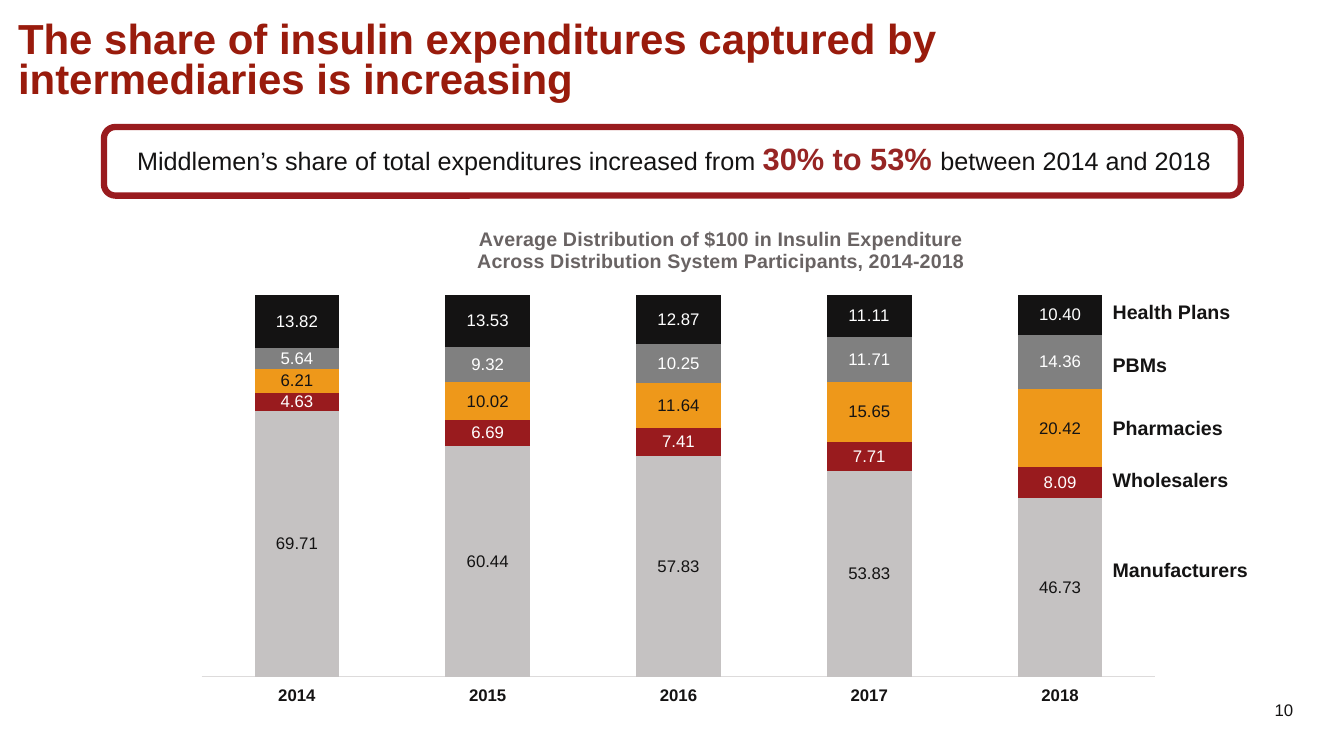
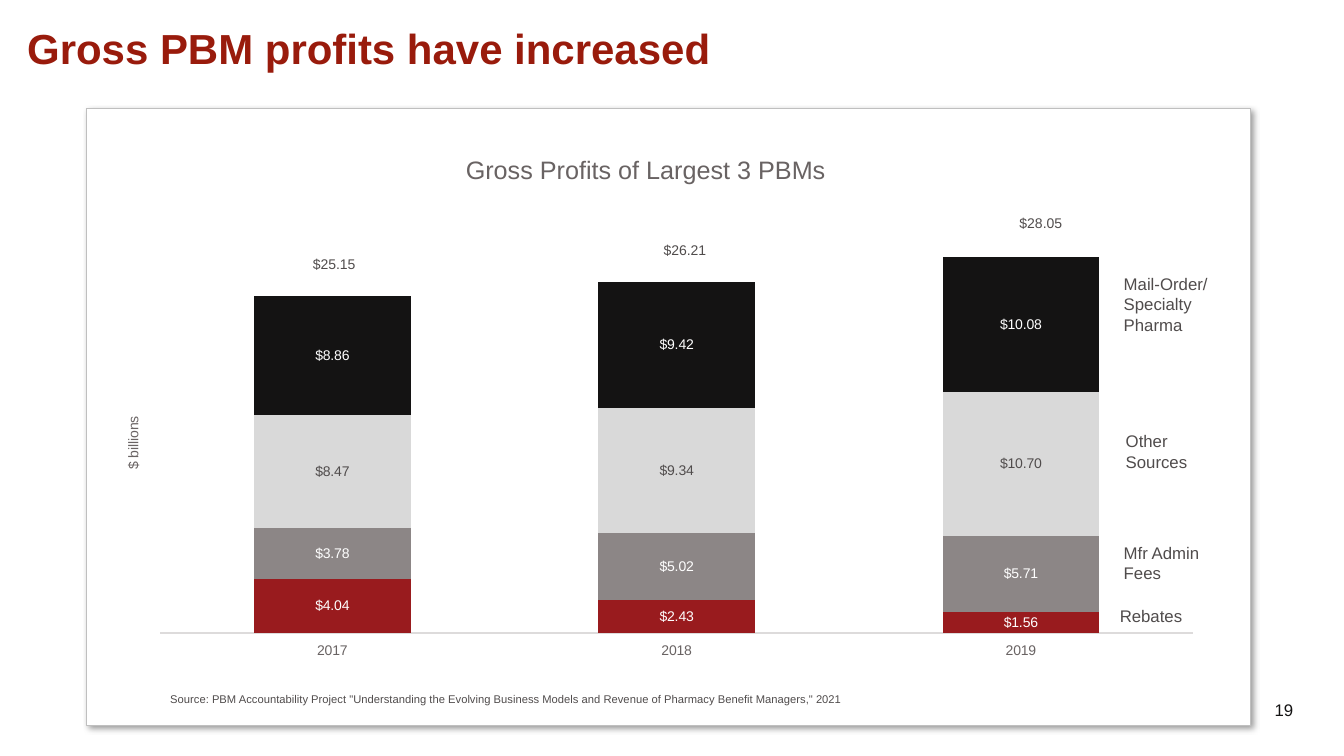
from lxml.etree import SubElement
from pptx import Presentation
from pptx.chart.data import CategoryChartData
from pptx.dml.color import RGBColor
from pptx.enum.chart import XL_CHART_TYPE as ChartType, XL_LABEL_POSITION as LabelPosition
from pptx.enum.chart import XL_TICK_LABEL_POSITION as TickLabels, XL_TICK_MARK as TickMark
from pptx.enum.shapes import MSO_SHAPE as ShapeKind
from pptx.enum.text import MSO_ANCHOR as Anchor, MSO_AUTO_SIZE as AutoSize, PP_ALIGN as Align
from pptx.oxml import parse_xml
from pptx.oxml.ns import nsdecls, qn
from pptx.util import Cm, Pt

FONT = "Arial"
TITLE_RED = "991B0C"
BRAND_RED = "991B1E"
ACCENT_RED = "972524"
INK = "141313"
DARK_GRAY = "504C4C"
CHART_GRAY = "696363"
AXIS_GRAY = "DDDBDB"
WHITE = "FFFFFF"


def color(hex_string):
    return RGBColor.from_string(hex_string)


def place(left, top, width, height):
    return Cm(left), Cm(top), Cm(width), Cm(height)


def style_font(font, size, hex_string, bold=False):
    font.name = FONT
    font.size = Pt(size)
    font.bold = bold
    font.color.rgb = color(hex_string)


def add_run(paragraph, text, size, hex_string, bold=False):
    for index, line in enumerate(text.split("\n")):
        if index:
            paragraph.add_line_break()
        run = paragraph.add_run()
        run.text = line
        style_font(run.font, size, hex_string, bold)


def add_text(slide, box, runs, align=Align.LEFT, inset=True):
    frame = slide.shapes.add_textbox(*place(*box)).text_frame
    frame.word_wrap = True
    if not inset:
        frame.margin_left = frame.margin_right = 0
        frame.margin_top = frame.margin_bottom = 0
    paragraph = frame.paragraphs[0]
    paragraph.alignment = align
    for run in runs:
        add_run(paragraph, *run)


def add_panel(slide, kind, box, line_color, line_width):
    panel = slide.shapes.add_shape(kind, *place(*box))
    panel.shadow.inherit = False
    panel.fill.solid()
    panel.fill.fore_color.rgb = color(WHITE)
    panel.line.color.rgb = color(line_color)
    panel.line.width = Pt(line_width)
    return panel


def add_drop_shadow(shape):
    effects = shape._element.spPr.find(qn("a:effectLst"))
    effects.append(parse_xml(
        f'<a:outerShdw {nsdecls("a")} blurRad="50800" dist="38100" dir="2700000" '
        'algn="tl" rotWithShape="0"><a:srgbClr val="000000"><a:alpha val="40000"/>'
        '</a:srgbClr></a:outerShdw>'))


def set_layout(parent, inner=False, **fractions):
    layout = parent.find(qn("c:layout"))
    if layout is None:
        layout = parent.makeelement(qn("c:layout"))
        parent.insert(0, layout)
    manual = SubElement(layout, qn("c:manualLayout"))
    if inner:
        SubElement(manual, qn("c:layoutTarget")).set("val", "inner")
    for name in ("x", "y"):
        SubElement(manual, qn(f"c:{name}Mode")).set("val", "edge")
    for name, value in fractions.items():
        SubElement(manual, qn(f"c:{name}")).set("val", str(value))


def add_stacked_chart(slide, box, kind, categories, series, gap, label_size, label_format,
                      axis_size, axis_color, axis_bold, axis_width):
    data = CategoryChartData()
    data.categories = categories
    for name, values, *_ in series:
        data.add_series(name, values)
    chart = slide.shapes.add_chart(kind, *place(*box), data).chart
    chart.has_legend = False
    style_font(chart.font, 10, INK)
    space = chart._chartSpace
    space.find(qn("c:chart")).addnext(parse_xml(
        f'<c:spPr {nsdecls("c", "a")}><a:noFill/><a:ln><a:noFill/></a:ln></c:spPr>'))

    plot = chart.plots[0]
    plot.gap_width = gap
    plot.overlap = 100
    plot.vary_by_categories = False
    for item, (_, _, fill, label_color) in zip(plot.series, series):
        item.format.fill.solid()
        item.format.fill.fore_color.rgb = color(fill)
        labels = item.data_labels
        labels.show_value = True
        labels.number_format = label_format
        labels.number_format_is_linked = False
        labels.position = LabelPosition.CENTER
        style_font(labels.font, label_size, label_color)

    axis = chart.category_axis
    axis.major_tick_mark = TickMark.NONE
    axis.tick_label_position = TickLabels.LOW
    axis.format.line.color.rgb = color(AXIS_GRAY)
    axis.format.line.width = Pt(axis_width)
    style_font(axis.tick_labels.font, axis_size, axis_color, axis_bold)
    chart.value_axis.has_major_gridlines = False
    chart.value_axis.minimum_scale = 0
    chart.value_axis.visible = False
    return chart


def set_chart_title(chart, lines, size, bold, x, y):
    chart.has_title = True
    title = chart.chart_title
    frame = title.text_frame
    for index, line in enumerate(lines):
        paragraph = frame.add_paragraph() if index else frame.paragraphs[0]
        add_run(paragraph, line, size, CHART_GRAY, bold)
    set_layout(title._element, x=x, y=y)


def add_slide(presentation, title, left, top, number):
    slide = presentation.slides.add_slide(presentation.slide_layouts[5])
    shape = slide.shapes.title
    shape.left, shape.top, shape.width, shape.height = place(left, top, 32.46, 1.24)
    frame = shape.text_frame
    frame.auto_size = AutoSize.NONE
    frame.word_wrap = True
    frame.vertical_anchor = Anchor.TOP
    paragraph = frame.paragraphs[0]
    paragraph.alignment = Align.LEFT
    paragraph.line_spacing = Pt(28)
    paragraph.space_after = Pt(9)
    add_run(paragraph, title, 30, TITLE_RED, True)
    add_text(slide, (30.63, 17.63, 1.96, 0.5), [(number, 12, INK)], Align.RIGHT, inset=False)
    return slide


def add_callout(slide, left, top, width, height):
    add_panel(slide, ShapeKind.ROUNDED_RECTANGLE, (left, top, width, height), BRAND_RED, 4.5)
    add_text(slide, (left + 0.15, top + 0.2, width - 0.22, 1.45), [
        ("Middlemen’s share of total expenditures increased from ", 18, INK),
        ("30% to 53% ", 22, ACCENT_RED, True),
        ("between 2014 and 2018", 18, INK),
    ], Align.CENTER)


def add_share_chart(slide, left, top, width, height):
    series = [
        ("Manufacturers", (69.71, 60.44, 57.83, 53.83, 46.73), "C5C2C2", INK),
        ("Wholesalers", (4.63, 6.69, 7.41, 7.71, 8.09), BRAND_RED, WHITE),
        ("Pharmacies", (6.21, 10.02, 11.64, 15.65, 20.42), "EE981A", INK),
        ("PBMs", (5.64, 9.32, 10.25, 11.71, 14.36), "808080", WHITE),
        ("Health Plans", (13.82, 13.53, 12.87, 11.11, 10.4), INK, WHITE),
    ]
    chart = add_stacked_chart(
        slide, (left, top, width, height), ChartType.COLUMN_STACKED_100,
        [str(year) for year in range(2014, 2019)], series, gap=125, label_size=12,
        label_format="#,##0.00", axis_size=12, axis_color=INK, axis_bold=True, axis_width=0.75)
    set_layout(chart._chartSpace.chart.plotArea, inner=True, x=0.07, y=0.16, w=0.91, h=0.75)
    set_chart_title(chart, ["Average Distribution of $100 in Insulin Expenditure",
                            "Across Distribution System Participants, 2014-2018"],
                    14, True, x=0.33, y=0.02)
    for (name, *_), offset in zip(series, (8.56, 6.28, 4.98, 3.38, 2.06)):
        add_text(slide, (left + 24.56, top + offset, 4.4, 0.86), [(name, 14, INK, True)])


def add_profit_panel(slide, left, top, width, height):
    panel = add_panel(slide, ShapeKind.RECTANGLE, (left, top, width, height), "BFBFBF", 0.75)
    add_drop_shadow(panel)
    series = [
        ("Rebates", (4.04, 2.43, 1.56), BRAND_RED, WHITE),
        ("Mfr Admin Fees", (3.78, 5.02, 5.71), "8C8686", WHITE),
        ("Other Sources", (8.47, 9.34, 10.7), "D9D9D9", DARK_GRAY),
        ("Mail-Order/Specialty Pharma", (8.86, 9.42, 10.08), INK, WHITE),
    ]
    chart = add_stacked_chart(
        slide, (left, top - 0.61, width + 0.17, height + 0.74), ChartType.COLUMN_STACKED,
        ["2017", "2018", "2019"], series, gap=120, label_size=10,
        label_format='"$"#,##0.00', axis_size=10, axis_color=CHART_GRAY, axis_bold=False,
        axis_width=1.5)
    set_layout(chart._chartSpace.chart.plotArea, inner=True, x=0.063, y=0.227, w=0.882, h=0.622)
    set_chart_title(chart, ["Gross Profits of Largest 3 PBMs"], 18, False, x=0.32, y=0.1)
    chart.value_axis.maximum_scale = 30
    chart.value_axis.major_unit = 10
    axis_title = chart.value_axis.axis_title
    add_run(axis_title.text_frame.paragraphs[0], "$ billions", 10, CHART_GRAY)
    body = axis_title._element.find(".//" + qn("a:bodyPr"))
    body.set("rot", "-5400000")
    body.set("vert", "horz")
    set_layout(axis_title._element, x=0.03, y=0.51)

    for text, x, y, lines in (
        ("Other\nSources", 25.94, 8, 2),
        ("Rebates", 25.79, 12.4, 1),
        ("Mfr Admin\nFees", 25.89, 10.82, 2),
        ("Mail-Order/\nSpecialty\nPharma", 25.89, 4.04, 3),
    ):
        add_text(slide, (left + x, top + y, 3.3, 0.3 + 0.5 * lines), [(text, 12, DARK_GRAY)])
    for text, x, y in (("$25.15", 4.6, 3.58), ("$26.21", 13.44, 3.23), ("$28.05", 22.41, 2.54)):
        add_text(slide, (left + x, top + y, 3.28, 1.47), [(text, 10, DARK_GRAY)], Align.CENTER)
    add_text(slide, (left + 1.86, top + 14.58, 22.05, 0.76), [(
        'Source: PBM Accountability Project "Understanding the Evolving Business Models '
        'and Revenue of Pharmacy Benefit Managers," 2021', 8, DARK_GRAY)])


def main():
    presentation = Presentation()
    presentation.slide_width = Cm(33.87)
    presentation.slide_height = Cm(19.05)

    share_slide = add_slide(
        presentation,
        "The share of insulin expenditures captured by\nintermediaries is increasing",
        0.2, 0.48, "10")
    add_callout(share_slide, 2.62, 3.2, 28.65, 1.73)
    add_share_chart(share_slide, 3.23, 5.38, 26.42, 12.83)

    profit_slide = add_slide(presentation, "Gross PBM profits have increased", 0.43, 0.71, "19")
    add_profit_panel(profit_slide, 2.18, 2.74, 29.34, 15.54)

    presentation.save("out.pptx")


if __name__ == "__main__":
    main()
